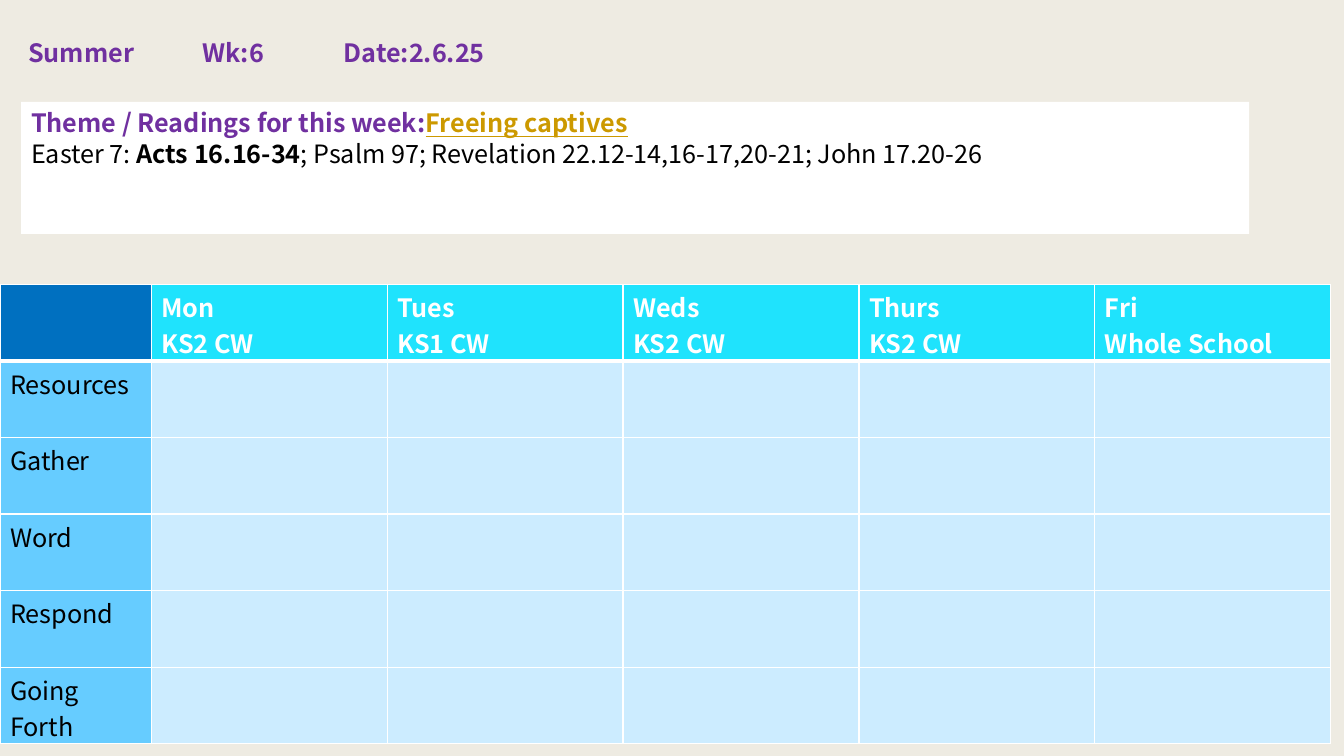
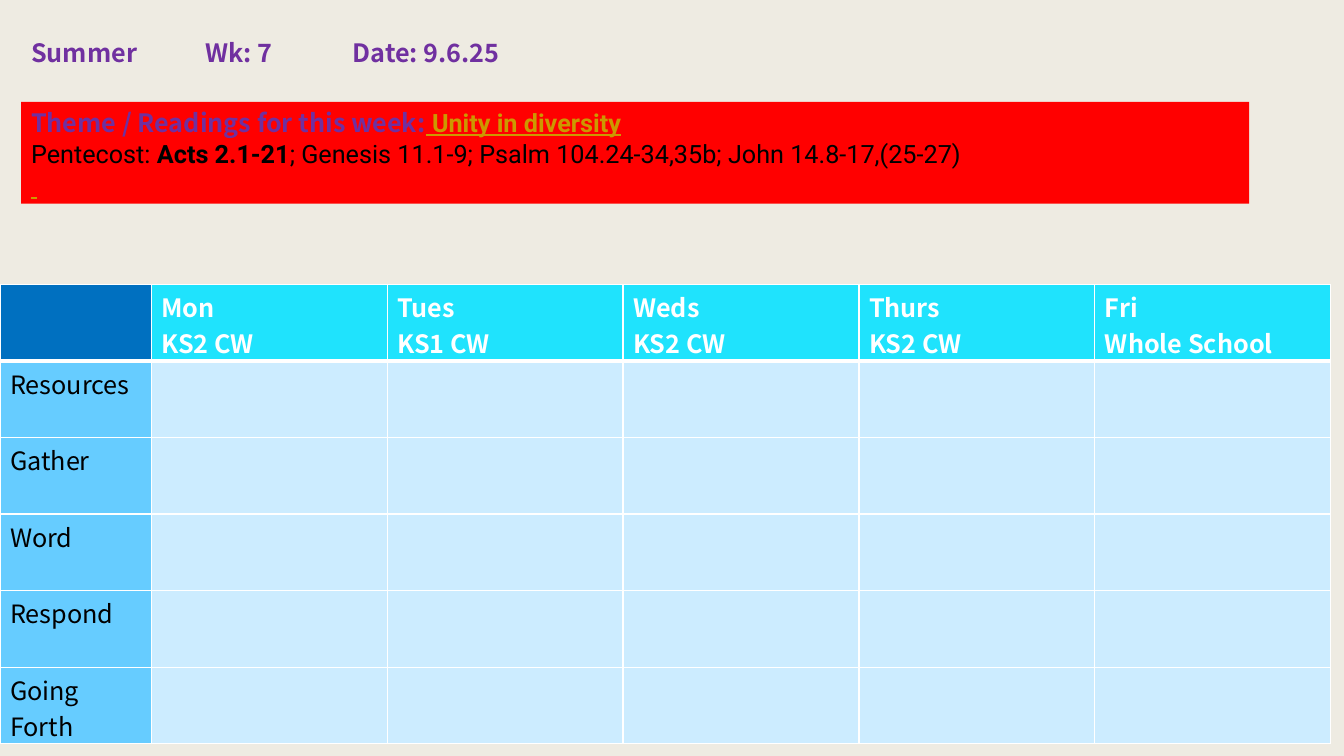
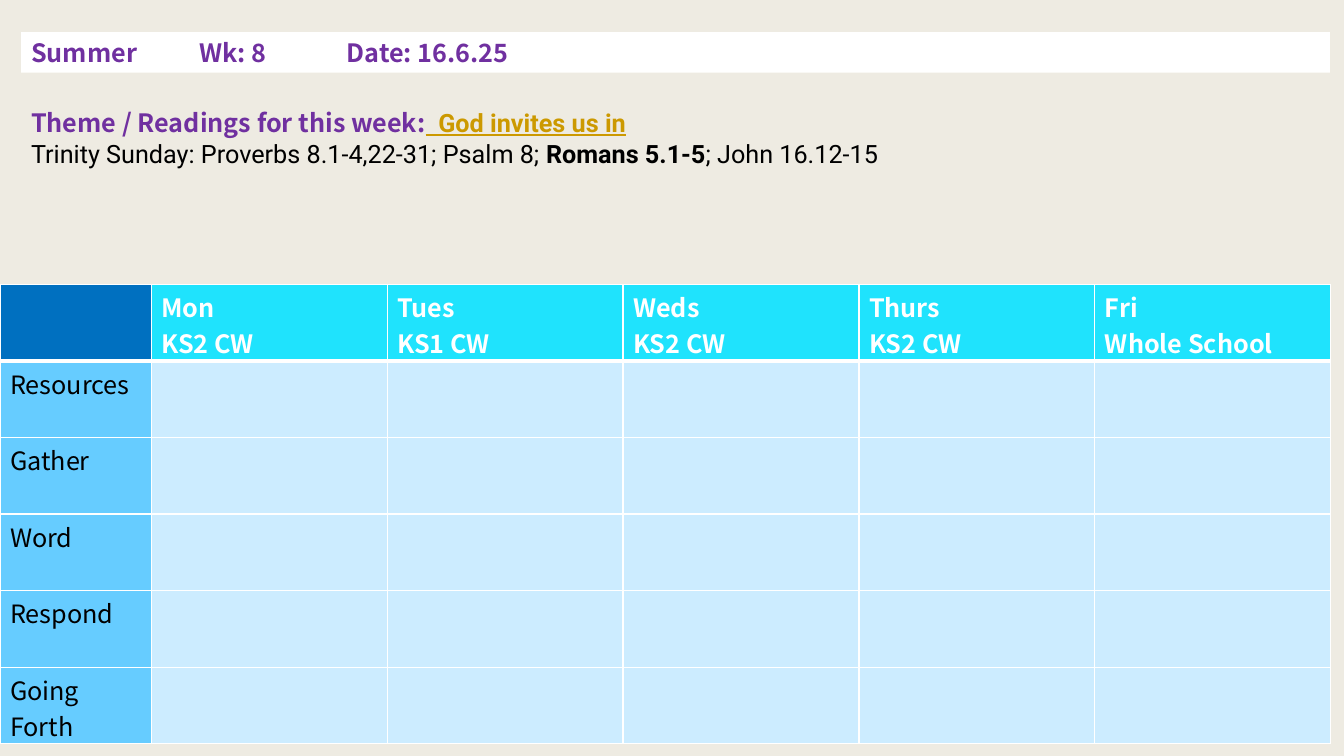
from lxml import etree
from pptx import Presentation
from pptx import util as u
from pptx.dml import color
from pptx.enum import shapes, text
from pptx.oxml import ns

SANS, ROBOTO = "Noto Sans CJK JP", "Roboto"
PAGE, WHITE, BLACK = "EEEBE2", "FFFFFF", "000000"
PURPLE, GOLD, RED = "7030A0", "CC9900", "FF0000"
NAVY, CYAN, SKY, PALE = "0070C0", "1FE3FD", "66CCFF", "CCECFF"

DAYS = [("Mon", "KS2 CW"), ("Tues", "KS1 CW"), ("Weds", "KS2 CW"),
        ("Thurs", "KS2 CW"), ("Fri", "Whole School")]
STEPS = ["Resources", "Gather", "Word", "Respond", "Going Forth"]

# Readings are (text, bold) pairs; tabs are the stops of the heading line
WEEKS = [
    dict(head=("Summer", "Wk:6", "Date:2.6.25"), left=0.18, tabs=(1.73, 3.13),
         band=None, theme="Freeing captives", font=SANS, fill=WHITE, high=1.31,
         reads=[("Easter 7: ", False), ("Acts 16.16-34", True),
                ("; Psalm 97; Revelation 22.12-14,16-17,20-21; John 17.20-26", False)]),
    dict(head=("Summer", "Wk: 7", "Date: 9.6.25"), left=0.21, tabs=(1.73, 3.19),
         band=None, theme=" Unity in diversity", font=ROBOTO, fill=RED, high=1.01,
         reads=[("Pentecost: ", False), ("Acts 2.1-21", True),
                ("; Genesis 11.1-9; Psalm 104.24-34,35b; John 14.8-17,(25-27)", False)],
         tail=" "),
    dict(head=("Summer", "Wk: 8", "Date: 16.6.25"), left=0.21, tabs=(1.67, 3.13),
         band=WHITE, theme="  God invites us in", font=ROBOTO, fill=None, high=1.01,
         reads=[("Trinity Sunday: Proverbs 8.1-4,22-31; Psalm 8; ", False),
                ("Romans 5.1-5", True), ("; John 16.12-15", False)]),
]


def rgb(code):
    return color.RGBColor.from_string(code)


def paint(thing, code):
    thing.fill.solid()
    thing.fill.fore_color.rgb = rgb(code)


def write(para, words, font=SANS, size=18, ink=BLACK, bold=False, line=False):
    run = para.add_run()
    run.text = words
    face = run.font
    face.name, face.size, face.bold = font, u.Pt(size), bold
    face.underline = line
    face.color.rgb = rgb(ink)


def panel(slide, left, top, wide, high, fill=None):
    """Text panel: a filled rectangle, or a plain text box without fill."""
    box = [u.Inches(n) for n in (left, top, wide, high)]
    if fill:
        shape = slide.shapes.add_shape(shapes.MSO_SHAPE.RECTANGLE, *box)
        shape.shadow.inherit = False
        shape.line.fill.background()
        paint(shape, fill)
    else:
        shape = slide.shapes.add_textbox(*box)
    frame = shape.text_frame
    frame.word_wrap = True
    frame.vertical_anchor = text.MSO_ANCHOR.TOP
    return frame


def lead(para):
    para.alignment = text.PP_ALIGN.LEFT
    para.line_spacing = u.Pt(22)
    return para


def heading(slide, week, top, wide, high):
    frame = panel(slide, week["left"], top, wide, high, week["band"])
    para = lead(frame.paragraphs[0])
    stops = etree.SubElement(para._p.get_or_add_pPr(), ns.qn("a:tabLst"))
    for stop in week["tabs"]:
        etree.SubElement(stops, ns.qn("a:tab"), pos=str(u.Inches(stop)), algn="l")
    write(para, "\t".join(week["head"]), ink=PURPLE, bold=True)


def theme(slide, week, left, top, wide):
    frame = panel(slide, left, top, wide, week["high"], week["fill"])
    para = lead(frame.paragraphs[0])
    write(para, "Theme / Readings for this week:", ink=PURPLE, bold=True)
    write(para, week["theme"], font=week["font"], ink=GOLD, bold=True, line=True)
    para.add_line_break()
    for words, bold in week["reads"]:
        write(para, words, font=week["font"], bold=bold)
    if "tail" in week:
        write(lead(frame.add_paragraph()), week["tail"], ink=GOLD, line=True)


def border(cell, foot):
    props = cell._tc.get_or_add_tcPr()
    for spot, (side, width) in enumerate(zip("LRTB", (1, 1, 1, foot))):
        edge = etree.Element(ns.qn("a:ln" + side), w=str(u.Pt(width)))
        fill = etree.SubElement(edge, ns.qn("a:solidFill"))
        etree.SubElement(fill, ns.qn("a:srgbClr"), val=WHITE)
        props.insert(spot, edge)


def planner(slide, left, top, first, wide, high):
    """Week grid: days across, steps down."""
    rows, cols = len(STEPS) + 1, len(DAYS) + 1
    grid = slide.shapes.add_table(
        rows, cols, u.Inches(left), u.Inches(top),
        u.Inches(first + wide * len(DAYS)), u.Inches(high * rows)).table
    grid.first_row = grid.horz_banding = False
    for i, col in enumerate(grid.columns):
        col.width = u.Inches(wide if i else first)
    for r, row in enumerate(grid.rows):
        row.height = u.Inches(high)
        for c, cell in enumerate(row.cells):
            cell.margin_top, cell.margin_bottom = u.Inches(0.04), 0
            if r == 0:
                paint(cell, CYAN if c else NAVY)
            else:
                paint(cell, PALE if c else SKY)
            border(cell, 1 if r else 3)
    # Labels
    for c, (day, group) in enumerate(DAYS, 1):
        frame = grid.cell(0, c).text_frame
        write(frame.paragraphs[0], day, ink=WHITE, bold=True)
        write(frame.add_paragraph(), group, ink=WHITE, bold=True)
    for r, step in enumerate(STEPS, 1):
        write(grid.cell(r, 0).text_frame.paragraphs[0], step)


def main():
    deck = Presentation()
    deck.slide_width, deck.slide_height = u.Inches(13.33), u.Inches(7.5)
    for week in WEEKS:
        slide = deck.slides.add_slide(deck.slide_layouts[6])
        paint(slide.background, PAGE)
        heading(slide, week, 0.32, 12.98, 0.4)
        theme(slide, week, 0.21, 1.01, 12.18)
        planner(slide, 0, 2.82, 1.5, 2.34, 0.76)
    deck.save("out.pptx")


if __name__ == "__main__":
    main()
